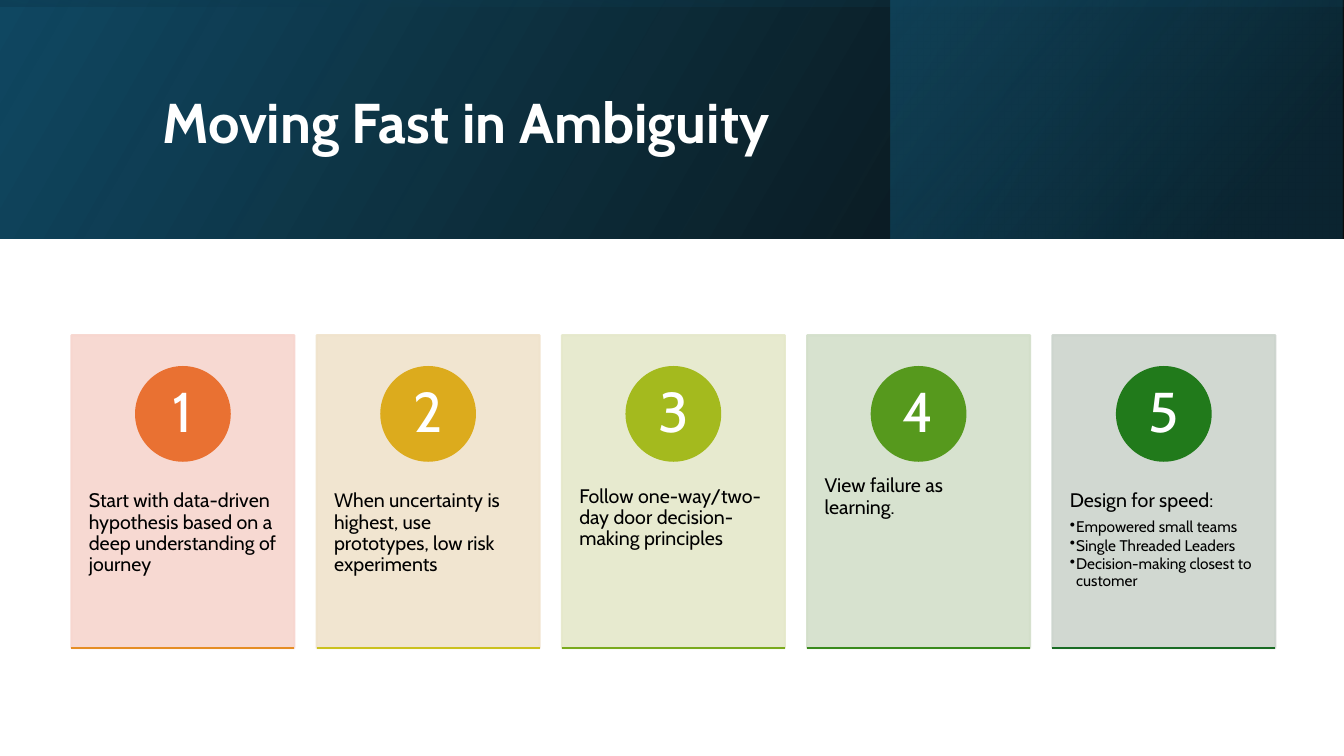
from lxml import etree
from pptx import Presentation
from pptx.dml.color import RGBColor
from pptx.enum.shapes import MSO_CONNECTOR, MSO_SHAPE
from pptx.enum.text import MSO_ANCHOR, PP_ALIGN
from pptx.oxml.ns import qn
from pptx.util import Cm, Pt

RECTANGLE, OVAL = MSO_SHAPE.RECTANGLE, MSO_SHAPE.OVAL
STRAIGHT = MSO_CONNECTOR.STRAIGHT
TOP, MIDDLE = MSO_ANCHOR.TOP, MSO_ANCHOR.MIDDLE
LEFT, CENTER = PP_ALIGN.LEFT, PP_ALIGN.CENTER

FONT = "Cabin"
COLOURS = {
    "white": "FFFFFF", "black": "000000", "navy": "104862",
    "deep": "0B3041", "teal": "156082",
}
SLIDE_WIDTH, SLIDE_HEIGHT, BANNER_HEIGHT = 33.87, 19.05, 6.02
CARD_LEFT, CARD_TOP, CARD_PITCH = 1.8, 8.45, 6.18
CARD_WIDTH, CARD_HEIGHT = 5.62, 7.88
CIRCLE_SIZE, CIRCLE_TOP = 2.36, 9.25
BODY_TOP, BODY_HEIGHT = 11.46, 4.72

# card colour, circle colour, base line colour, statement, bullets
CARDS = [
    ("F7D5CE", "E97132", "E58D25",
     "Start with data-driven hypothesis based on a deep understanding of journey", []),
    ("F0E3CB", "DCAB1D", "CBC11E",
     "When uncertainty is highest, use prototypes, low risk experiments", []),
    ("E5E8CA", "A4BA1E", "7AAA1E",
     "Follow one-way/two-day door decision-making principles", []),
    ("D3DFCA", "56991D", "398A1C", "View failure as learning.", []),
    ("CCD4CD", "217A1B", "196B24", "Design for speed:",
     ["Empowered small teams", "Single Threaded Leaders",
      "Decision-making closest to customer"]),
]


def set_alpha(colour_element, percent):
    etree.SubElement(colour_element, qn("a:alpha"), val=str(percent * 1000))


def add_filled(page, kind, left, top, width, height, colour, opacity=100):
    shape = page.shapes.add_shape(kind, Cm(left), Cm(top), Cm(width), Cm(height))
    shape.shadow.inherit = False
    shape.fill.solid()
    shape.fill.fore_color.rgb = RGBColor.from_string(colour)
    shape.line.color.rgb = RGBColor.from_string(colour)
    shape.line.width = Pt(1.5)
    if opacity < 100:
        for colour_element in shape._element.spPr.iter(qn("a:srgbClr")):
            set_alpha(colour_element, opacity)
    return shape


def add_gradient(page, left, top, width, height, stops, angle, rotation=0):
    """Add a mirrored rectangle; stops are (position, colour name, opacity) in percent."""
    shape = page.shapes.add_shape(RECTANGLE, Cm(left), Cm(top), Cm(width), Cm(height))
    shape.shadow.inherit = False
    shape.line.fill.background()
    shape.rotation = rotation
    properties = shape._element.spPr
    properties.find(qn("a:xfrm")).set("flipH", "1")
    gradient = etree.Element(qn("a:gradFill"), rotWithShape="1")
    stop_list = etree.SubElement(gradient, qn("a:gsLst"))
    for position, name, opacity in stops:
        stop = etree.SubElement(stop_list, qn("a:gs"), pos=str(position * 1000))
        set_alpha(etree.SubElement(stop, qn("a:srgbClr"), val=COLOURS[name]), opacity)
    etree.SubElement(gradient, qn("a:lin"), ang=str(angle * 60000), scaled="0")
    properties.find(qn("a:prstGeom")).addnext(gradient)


def prepare_frame(shape, anchor, side, end):
    frame = shape.text_frame
    frame.word_wrap = True
    frame.vertical_anchor = anchor
    frame.margin_left = frame.margin_right = Cm(side)
    frame.margin_top = frame.margin_bottom = Cm(end)
    return frame


def add_text_box(page, left, top, width, height, anchor, side, end):
    box = page.shapes.add_textbox(Cm(left), Cm(top), Cm(width), Cm(height))
    return prepare_frame(box, anchor, side, end)


def write(para, text, size, colour, align=LEFT, bold=False, after=0):
    para.alignment = align
    para.line_spacing = 0.9
    para.space_after = Pt(after)
    span = para.add_run()
    span.text = text
    span.font.name = FONT
    span.font.size = Pt(size)
    span.font.bold = bold
    span.font.color.rgb = RGBColor.from_string(COLOURS[colour])


def make_bullet(para):
    para.level = 1
    properties = para._p.get_or_add_pPr()
    properties.set("marL", str(Cm(0.16)))
    properties.set("indent", str(-Cm(0.16)))
    etree.SubElement(properties, qn("a:buChar"), char="•")


def add_base_line(page, left, top, width, colour):
    line = page.shapes.add_connector(
        STRAIGHT, Cm(left), Cm(top), Cm(left + width), Cm(top))
    line.line.color.rgb = RGBColor.from_string(colour)
    line.line.width = Pt(1.5)
    etree.SubElement(line._element.spPr, qn("a:effectLst"))


def add_banner(page):
    add_gradient(page, 0, 0, SLIDE_WIDTH, BANNER_HEIGHT,
                 [(0, "black", 96), (100, "navy", 100)], 330)
    add_gradient(page, 22.45, 0, 11.39, BANNER_HEIGHT,
                 [(19, "deep", 68), (100, "teal", 48)], 320)
    offset = (SLIDE_WIDTH - BANNER_HEIGHT) / 2
    add_gradient(page, offset, -offset, BANNER_HEIGHT, SLIDE_WIDTH,
                 [(23, "navy", 16), (99, "black", 45)], 350, rotation=270)
    title = add_text_box(page, 3.84, 0.97, 27, 4.37, MIDDLE, 0.25, 0.13)
    write(title.paragraphs[0], "Moving Fast in Ambiguity", 40, "white", bold=True)


def add_card(page, number, left, card, circle, base, statement, bullets):
    add_filled(page, RECTANGLE, left, CARD_TOP, CARD_WIDTH, CARD_HEIGHT, card, 90)
    body = add_text_box(page, left, BODY_TOP, CARD_WIDTH, BODY_HEIGHT, TOP, 0.44, 0.91)
    write(body.paragraphs[0], statement, 14, "black", after=5)
    for bullet in bullets:
        para = body.add_paragraph()
        make_bullet(para)
        write(para, bullet, 11, "black", after=1.5)
    disc = add_filled(page, OVAL, left + (CARD_WIDTH - CIRCLE_SIZE) / 2, CIRCLE_TOP,
                      CIRCLE_SIZE, CIRCLE_SIZE, circle)
    label = prepare_frame(disc, MIDDLE, 0.18, 0.03)
    write(label.paragraphs[0], str(number), 40, "white", align=CENTER)
    add_base_line(page, left, CARD_TOP + CARD_HEIGHT, CARD_WIDTH, base)


def main():
    deck = Presentation()
    deck.slide_width, deck.slide_height = Cm(SLIDE_WIDTH), Cm(SLIDE_HEIGHT)
    page = deck.slides.add_slide(deck.slide_layouts[6])
    add_banner(page)
    for index, card in enumerate(CARDS):
        add_card(page, index + 1, CARD_LEFT + index * CARD_PITCH, *card)
    deck.save("out.pptx")


if __name__ == "__main__":
    main()
